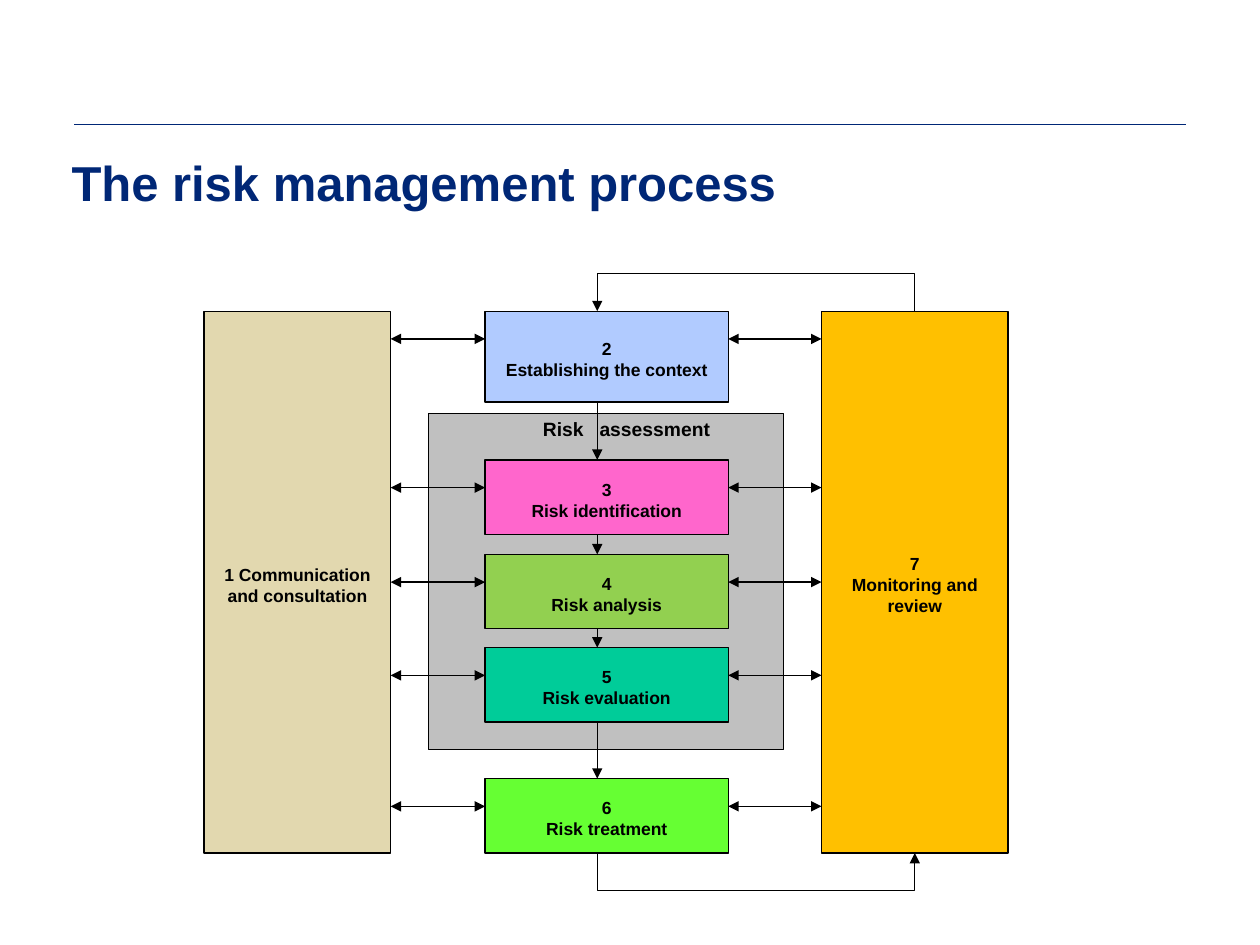
"""Build the risk management process slide."""
from lxml import etree
from pptx import Presentation, util as u
from pptx.dml.color import RGBColor
from pptx.enum import shapes, text
from pptx.oxml.ns import qn

HUES = {
    "navy": "002776", "black": "000000", "grey": "C0C0C0", "blue": "B1CBFF",
    "pink": "FF66CC", "green": "92D050", "teal": "00CC99", "lime": "66FF33",
    "sand": "E2D8AF", "gold": "FFC000",
}
TOP, BASE = 2.47, 6.77
LEFT, WIDE = 3.85, 1.93
SIDE = 1.48
COMM, WATCH = 1.62, 6.52
FLOW = 4.74
LOOP = 0.3
STEPS = [
    (TOP, 0.72, "blue", "2", "Establishing the context"),
    (3.65, 0.59, "pink", "3", "Risk identification"),
    (4.4, 0.59, "green", "4", "Risk analysis"),
    (5.14, 0.59, "teal", "5", "Risk evaluation"),
    (6.18, 0.59, "lime", "6", "Risk treatment"),
]


def hue(name):
    return RGBColor.from_string(HUES[name])


def style(line, color="black", width=0.75, ends=()):
    line.width = u.Pt(width)
    line.color.rgb = hue(color)
    for end in ends:
        etree.SubElement(line._get_or_add_ln(), qn(f"a:{end}"), type="triangle")


def write(frame, rows, size, color="black", align=text.PP_ALIGN.LEFT):
    frame.word_wrap = True
    for i, row in enumerate(rows):
        para = frame.add_paragraph() if i else frame.paragraphs[0]
        para.alignment = align
        run = para.add_run()
        run.text = row
        run.font.name = "Arial"
        run.font.size = u.Pt(size)
        run.font.bold = True
        run.font.color.rgb = hue(color)


def box(slide, x, y, w, h, color, rows=()):
    rect = slide.shapes.add_shape(
        shapes.MSO_SHAPE.RECTANGLE, *map(u.Inches, (x, y, w, h)))
    rect.shadow.inherit = False
    rect.fill.solid()
    rect.fill.fore_color.rgb = hue(color)
    style(rect.line)
    frame = rect.text_frame
    frame.margin_top = u.Inches(0.09)
    frame.vertical_anchor = text.MSO_ANCHOR.MIDDLE
    write(frame, rows, 10, align=text.PP_ALIGN.CENTER)


def label(slide, x, y, w, h, words, size, color="black", top=0.05):
    frame = slide.shapes.add_textbox(*map(u.Inches, (x, y, w, h))).text_frame
    frame.margin_top = u.Inches(top)
    write(frame, [words], size, color)
    return frame.paragraphs[0]


def tab(para, pos):
    props = para._p.get_or_add_pPr()
    stops = etree.SubElement(props, qn("a:tabLst"))
    etree.SubElement(stops, qn("a:tab"), pos=str(u.Inches(pos)), algn="l")


def link(slide, x1, y1, x2, y2, color="black", width=0.75, ends=()):
    line = slide.shapes.add_connector(
        shapes.MSO_CONNECTOR.STRAIGHT, *map(u.Inches, (x1, y1, x2, y2)))
    style(line.line, color, width, ends)
    etree.SubElement(line._element.spPr, qn("a:effectLst"))


def loop(slide, start, far, end):
    mid = WATCH + SIDE / 2
    build = slide.shapes.build_freeform(u.Inches(FLOW), u.Inches(start))
    turns = [(FLOW, far), (mid, far), (mid, start)]
    build.add_line_segments(
        [(u.Inches(x), u.Inches(y)) for x, y in turns], close=False)
    path = build.convert_to_shape()
    path.shadow.inherit = False
    path.fill.background()
    style(path.line, ends=[end])


def main():
    deck = Presentation()
    deck.slide_width, deck.slide_height = u.Inches(10), u.Inches(7.5)
    slide = deck.slides.add_slide(deck.slide_layouts[6])
    link(slide, 0.59, 0.99, 9.41, 0.99, "navy", 0.5)
    label(slide, 0.47, 1.1, 9, 0.85, "The risk management process", 28, "navy", 0.11)

    box(slide, 3.4, 3.28, 2.82, 2.67, "grey")
    for y, h, color, *rows in STEPS:
        box(slide, LEFT, y, WIDE, h, color, rows)
    tab(label(slide, 4.21, 3.26, 1.78, 0.3, "Risk\tassessment", 11), 0.45)
    box(slide, COMM, TOP, SIDE, BASE - TOP, "sand",
        ["1 Communication and consultation"])
    box(slide, WATCH, TOP, SIDE, BASE - TOP, "gold",
        ["7", "Monitoring and review"])

    for step, after in zip(STEPS, STEPS[1:]):
        link(slide, FLOW, step[0] + step[1], FLOW, after[0], ends=["tailEnd"])
    loop(slide, BASE, BASE + LOOP, "tailEnd")
    loop(slide, TOP, TOP - LOOP, "headEnd")
    for y, *_ in STEPS:
        for x1, x2 in [(COMM + SIDE, LEFT), (LEFT + WIDE, WATCH)]:
            link(slide, x1, y + 0.22, x2, y + 0.22, ends=["headEnd", "tailEnd"])
    deck.save("out.pptx")


if __name__ == "__main__":
    main()
